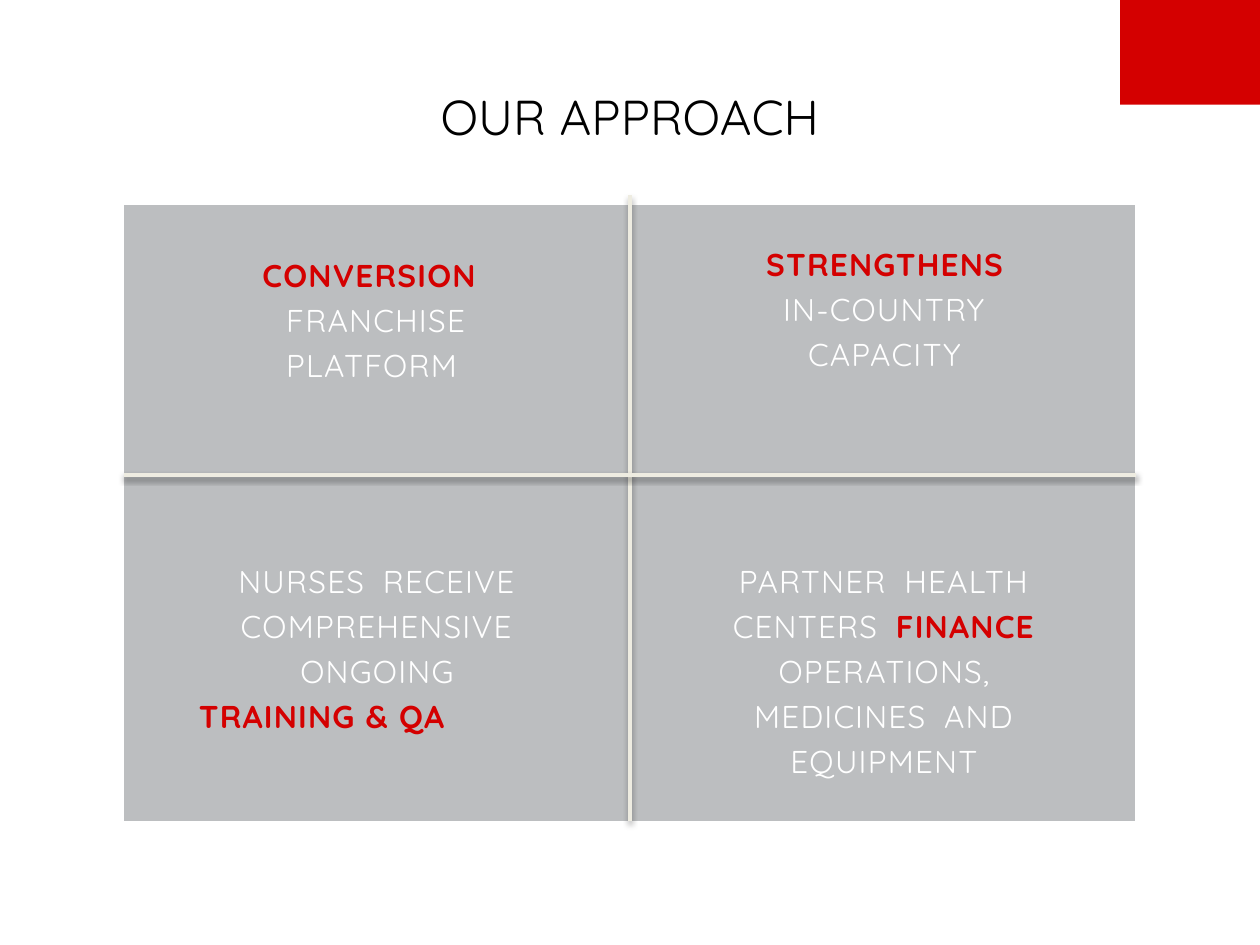
from lxml import etree
from pptx import Presentation
from pptx.dml.color import RGBColor
from pptx.enum.shapes import MSO_CONNECTOR, MSO_SHAPE
from pptx.enum.text import MSO_ANCHOR, PP_ALIGN
from pptx.oxml import parse_xml
from pptx.oxml.ns import nsdecls, qn
from pptx.util import Cm, Pt

LEFT, CENTER = PP_ALIGN.LEFT, PP_ALIGN.CENTER
RED = RGBColor(0xD4, 0x00, 0x00)
GREY = RGBColor(0xBC, 0xBE, 0xC0)
CREAM = RGBColor(0xEE, 0xEC, 0xE1)
WHITE = RGBColor(0xFF, 0xFF, 0xFF)
BLACK = RGBColor(0x00, 0x00, 0x00)
FONT = "Quicksand"
NO_STYLE = "{2D5ABB26-0587-4C30-8999-92F81FD0307C}"

# Run formats; "gap" is a wide space between words
STRONG = {"size": Pt(18), "bold": True, "name": FONT}
PLAIN = {"size": Pt(18), "bold": False, "name": FONT}
HEAD = {"size": Pt(28), "bold": False, "name": FONT}
KINDS = {  # format, colour, letter spacing in points
    "strong": (STRONG, RED, 0.7),
    "plain": (PLAIN, WHITE, 0.7),
    "gap": (PLAIN, WHITE, 5),
    "head": (HEAD, BLACK, 0.1),
}

# Content: paragraphs of (align, left, right, indent in cm, format, runs)
TITLE = (CENTER, 0, 0, 0, {}, [("head", "OUR APPROACH")])
WIDE = {"line_spacing": 1.14}
CELLS = [  # row, column, top margin in cm, paragraphs
    (0, 0, 0.91, [
        (LEFT, 3.28, 2.5, -0.48, WIDE,
         [("strong", "CONVERSION "), ("plain", "FRANCHISE PLATFORM")]),
    ]),
    (0, 1, 0.79, [
        (CENTER, 0.13, 0, 0, {}, [("strong", "STRENGTHENS")]),
        (CENTER, 3.07, 2.95, 0, WIDE, [("plain", "IN-COUNTRY CAPACITY")]),
    ]),
    (1, 0, 0.91, [
        (CENTER, 2.26, 2.2, 0, WIDE,
         [("plain", "NURSES"), ("gap", " "),
          ("plain", "RECEIVE COMPREHENSIVE ONGOING")]),
        (CENTER, 0.03, 2.2, 0, {"space_before": Pt(3)},
         [("strong", "TRAINING & QA")]),
    ]),
    (1, 1, 0.91, [
        (CENTER, 2.1, 2, 0, WIDE,
         [("plain", "PARTNER"), ("gap", " "), ("plain", "HEALTH CENTERS"),
          ("gap", " "), ("strong", "FINANCE "), ("plain", "OPERATIONS,")]),
        (CENTER, 2.5, 2.4, 0, WIDE,
         [("plain", "MEDICINES"), ("gap", " "), ("plain", "AND EQUIPMENT")]),
    ]),
]
COLS, ROWS = (10.16, 10.24), (6.17, 6.25)
X, Y = 2.49, 4.14
RULES = [(12.7, 3.94, 12.7, 16.56), (X, 9.58, 22.91, 9.58)]


def assign(item, values):
    for name, value in values.items():
        setattr(item, name, value)


def write(frame, paras):
    frame.word_wrap = True
    for i, (align, left, right, indent, form, runs) in enumerate(paras):
        para = frame.add_paragraph() if i else frame.paragraphs[0]
        assign(para, {"alignment": align, **form})
        props = para._p.get_or_add_pPr()
        for key, size in (("marL", left), ("marR", right), ("indent", indent)):
            props.set(key, str(int(Cm(size))))
        for kind, text in runs:
            form, tint, space = KINDS[kind]
            run = para.add_run()
            run.text = text
            assign(run.font, form)
            run.font.color.rgb = tint
            run._r.get_or_add_rPr().set("spc", str(int(space * 100)))


def add_rule(shapes, ends):
    line = shapes.add_connector(MSO_CONNECTOR.STRAIGHT, *map(Cm, ends))
    line.line.color.rgb = CREAM
    line.line.width = Pt(2)
    line._element.spPr.append(parse_xml(
        f'<a:effectLst {nsdecls("a")}><a:outerShdw blurRad="{Pt(3.1)}" '
        f'dist="{Pt(1.6)}" dir="5400000" rotWithShape="0">'
        '<a:srgbClr val="000000"><a:alpha val="38000"/></a:srgbClr>'
        '</a:outerShdw></a:effectLst>'))


def add_grid(shapes):
    box = map(Cm, (X, Y, sum(COLS), sum(ROWS)))
    table = shapes.add_table(len(ROWS), len(COLS), *box).table
    assign(table, {"first_row": False, "horz_banding": False})
    props = table._tbl.tblPr
    style = props.find(qn("a:tableStyleId"))
    if style is None:
        style = etree.SubElement(props, qn("a:tableStyleId"))
    style.text = NO_STYLE
    for col, width in zip(table.columns, COLS):
        col.width = Cm(width)
    for row, height in zip(table.rows, ROWS):
        row.height = Cm(height)
    for r, c, top, paras in CELLS:
        cell = table.cell(r, c)
        cell.fill.solid()
        cell.fill.fore_color.rgb = GREY
        assign(cell, {"margin_left": 0, "margin_right": 0,
                      "margin_top": Cm(top), "margin_bottom": 0})
        write(cell.text_frame, paras)


def main():
    deck = Presentation()
    assign(deck, {"slide_width": Cm(25.4), "slide_height": Cm(19.05)})
    shapes = deck.slides.add_slide(deck.slide_layouts[6]).shapes

    # Title
    frame = shapes.add_textbox(*map(Cm, (1.27, 1.75, 22.86, 1.19))).text_frame
    assign(frame, {"margin_left": 0, "margin_right": 0, "margin_top": 0,
                   "margin_bottom": 0, "vertical_anchor": MSO_ANCHOR.MIDDLE})
    write(frame, [TITLE])

    # Corner block
    block = shapes.add_shape(MSO_SHAPE.RECTANGLE,
                             *map(Cm, (22.58, 0, 2.82, 2.11)))
    block.shadow.inherit = False
    block.fill.solid()
    block.fill.fore_color.rgb = RED
    block.line.fill.background()

    # Four quadrants and the cross over them
    add_grid(shapes)
    for ends in RULES:
        add_rule(shapes, ends)
    deck.save("out.pptx")


if __name__ == "__main__":
    main()
